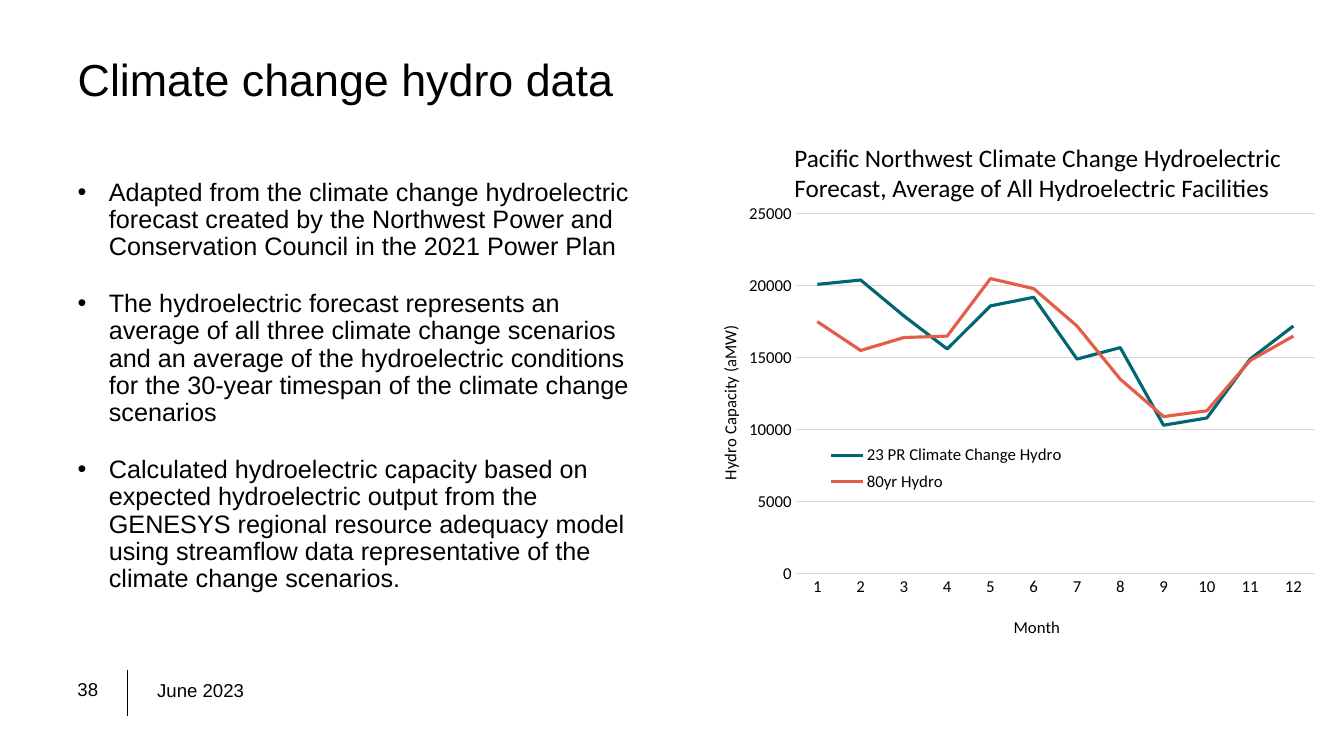
import pptx
import pptx.chart.data
import pptx.dml.color
import pptx.enum.chart
import pptx.enum.shapes
import pptx.enum.text
import pptx.oxml
import pptx.oxml.ns
import pptx.util
from pptx.util import Inches

COLORS = {
    "text": "000000",
    "grid": "D9D9D9",
    "climate": "006671",
    "historic": "E45D48",
}

BULLETS = [
    "Adapted from the climate change hydroelectric forecast created by the "
    "Northwest Power and Conservation Council in the 2021 Power Plan",
    "The hydroelectric forecast represents an average of all three climate change "
    "scenarios and an average of the hydroelectric conditions for the 30-year "
    "timespan of the climate change scenarios",
    "Calculated hydroelectric capacity based on expected hydroelectric output from "
    "the GENESYS regional resource adequacy model using streamflow data "
    "representative of the climate change scenarios.",
]

# Series name, colour, monthly capacity
HYDRO_SERIES = [
    ("23 PR Climate Change Hydro", "climate",
     [20100, 20400, 17900, 15600, 18600, 19200, 14900, 15700, 10300, 10800, 14900, 17200]),
    ("80yr Hydro", "historic",
     [17500, 15500, 16400, 16500, 20500, 19800, 17200, 13500, 10900, 11300, 14800, 16500]),
]


def rgb(name):
    return pptx.dml.color.RGBColor.from_string(COLORS[name])


def place(element, x, y, width=None, height=None, inner=False):
    """Give a chart part a manual layout, as fractions of the chart."""
    for old in element.findall(pptx.oxml.ns.qn("c:layout")):
        element.remove(old)
    tags = '<c:layoutTarget val="inner"/>' if inner else ""
    tags += '<c:xMode val="edge"/><c:yMode val="edge"/>'
    for tag, value in zip("xywh", (x, y, width, height)):
        if value is not None:
            tags += f'<c:{tag} val="{value}"/>'
    layout = pptx.oxml.parse_xml(
        f'<c:layout {pptx.oxml.ns.nsdecls("c")}>'
        f"<c:manualLayout>{tags}</c:manualLayout></c:layout>")
    overlay = element.find(pptx.oxml.ns.qn("c:overlay"))
    if overlay is None:
        element.insert(0, layout)
    else:
        overlay.addprevious(layout)


class SlideBuilder:
    font = "Arial"
    chart_font = "Calibri"

    def __init__(self, presentation):
        self.slide = presentation.slides.add_slide(presentation.slide_layouts[1])

    def style_font(self, font, size, name=None):
        font.size = pptx.util.Pt(size)
        font.name = name or self.font
        font.bold = False
        font.color.rgb = rgb("text")

    def style_paragraph(self, paragraph, size, name=None, spacing=None):
        paragraph.alignment = pptx.enum.text.PP_ALIGN.LEFT
        if spacing:
            paragraph.line_spacing = spacing
        for run in paragraph.runs:
            self.style_font(run.font, size, name)

    def move(self, shape, left, top, width, height):
        shape.left, shape.top = Inches(left), Inches(top)
        shape.width, shape.height = Inches(width), Inches(height)

    def title(self, text, box):
        shape = self.slide.shapes.title
        self.move(shape, *box)
        frame = shape.text_frame
        frame.text = text
        frame.auto_size = pptx.enum.text.MSO_AUTO_SIZE.NONE
        frame.vertical_anchor = pptx.enum.text.MSO_ANCHOR.MIDDLE
        self.style_paragraph(frame.paragraphs[0], 32, spacing=0.9)

    def bullets(self, items, box):
        shape = self.slide.placeholders[1]
        self.move(shape, *box)
        frame = shape.text_frame
        frame.text = "\n".join(items)
        frame.auto_size = pptx.enum.text.MSO_AUTO_SIZE.NONE
        frame.vertical_anchor = pptx.enum.text.MSO_ANCHOR.TOP
        for index, paragraph in enumerate(frame.paragraphs):
            properties = paragraph._p.get_or_add_pPr()
            properties.set("marL", str(Inches(0.31)))
            properties.set("indent", str(-Inches(0.31)))
            properties.append(pptx.oxml.parse_xml(
                f'<a:buChar {pptx.oxml.ns.nsdecls("a")} char="•"/>'))
            paragraph.space_before = pptx.util.Pt(13.3 if index else 0)
            paragraph.space_after = pptx.util.Pt(8)
            self.style_paragraph(paragraph, 18, spacing=0.9)

    def text(self, text, box, size, name=None):
        shape = self.slide.shapes.add_textbox(*map(Inches, box))
        shape.text_frame.text = text
        shape.text_frame.word_wrap = True
        self.style_paragraph(shape.text_frame.paragraphs[0], size, name)

    def line(self, start, end):
        connector = self.slide.shapes.add_connector(
            pptx.enum.shapes.MSO_CONNECTOR.STRAIGHT, *map(Inches, start + end))
        connector.line.color.rgb = rgb("text")
        connector.line.width = pptx.util.Pt(0.75)
        connector._element.spPr.append(pptx.oxml.parse_xml(
            f'<a:effectLst {pptx.oxml.ns.nsdecls("a")}/>'))

    def axis(self, axis, title, x, y):
        axis.major_tick_mark = pptx.enum.chart.XL_TICK_MARK.NONE
        axis.minor_tick_mark = pptx.enum.chart.XL_TICK_MARK.NONE
        self.style_font(axis.tick_labels.font, 12, self.chart_font)
        frame = axis.axis_title.text_frame
        frame.text = title
        self.style_font(frame.paragraphs[0].runs[0].font, 12, self.chart_font)
        place(axis.axis_title._element, x, y)

    def line_chart(self, categories, series_list, box):
        data = pptx.chart.data.CategoryChartData()
        data.categories = categories
        for name, _, values in series_list:
            data.add_series(name, values)
        chart = self.slide.shapes.add_chart(
            pptx.enum.chart.XL_CHART_TYPE.LINE, *map(Inches, box), data).chart
        chart.has_title = False
        self.style_font(chart.font, 12, self.chart_font)
        place(chart._chartSpace.chart.plotArea, 0.145, 0.15, 0.81, 0.72, inner=True)

        # Series lines
        chart.plots[0].vary_by_categories = False
        for series, (_, color, _) in zip(chart.plots[0].series, series_list):
            series.smooth = False
            series.format.line.color.rgb = rgb(color)
            series.format.line.width = pptx.util.Pt(2.25)

        # Axes
        self.axis(chart.category_axis, "Month", 0.48, 0.95)
        chart.category_axis.format.line.color.rgb = rgb("grid")
        chart.category_axis.format.line.width = pptx.util.Pt(0.75)
        value_axis = chart.value_axis
        self.axis(value_axis, "Hydro Capacity (aMW)", 0.02, 0.37)
        body = value_axis.axis_title.text_frame._txBody.bodyPr
        body.set("rot", "-5400000")
        body.set("vert", "horz")
        value_axis.minimum_scale = 0
        value_axis.maximum_scale = 25000
        value_axis.major_unit = 5000
        value_axis.format.line.fill.background()
        gridlines = value_axis.major_gridlines.format.line
        gridlines.color.rgb = rgb("grid")
        gridlines.width = pptx.util.Pt(0.75)

        # Legend inside the plot
        chart.has_legend = True
        legend = chart.legend
        legend.position = pptx.enum.chart.XL_LEGEND_POSITION.RIGHT
        legend.include_in_layout = False
        self.style_font(legend.font, 12, self.chart_font)
        place(legend._element, 0.18, 0.6, 0.4, 0.12)


def main():
    presentation = pptx.Presentation()
    presentation.slide_width = Inches(13.33)
    presentation.slide_height = Inches(7.5)
    builder = SlideBuilder(presentation)

    # Footer
    builder.text("38", (0.67, 6.68, 0.56, 0.33), 13.3)
    builder.text("June 2023", (1.46, 6.69, 4.61, 0.33), 13.3)
    builder.line((1.26, 6.65), (1.26, 7.1))

    # Title and list
    builder.title("Climate change hydro data", (0.67, 0.4, 12, 0.83))
    builder.bullets(BULLETS, (0.67, 1.73, 5.75, 4.55))

    # Chart and its heading
    months = [str(month) for month in range(1, 13)]
    builder.line_chart(months, HYDRO_SERIES, (6.97, 1.38, 6.36, 5))
    builder.text("Pacific Northwest Climate Change Hydroelectric Forecast, "
                 "Average of All Hydroelectric Facilities",
                 (7.78, 1.36, 5.55, 0.71), 18, builder.chart_font)

    presentation.save("out.pptx")


if __name__ == "__main__":
    main()
